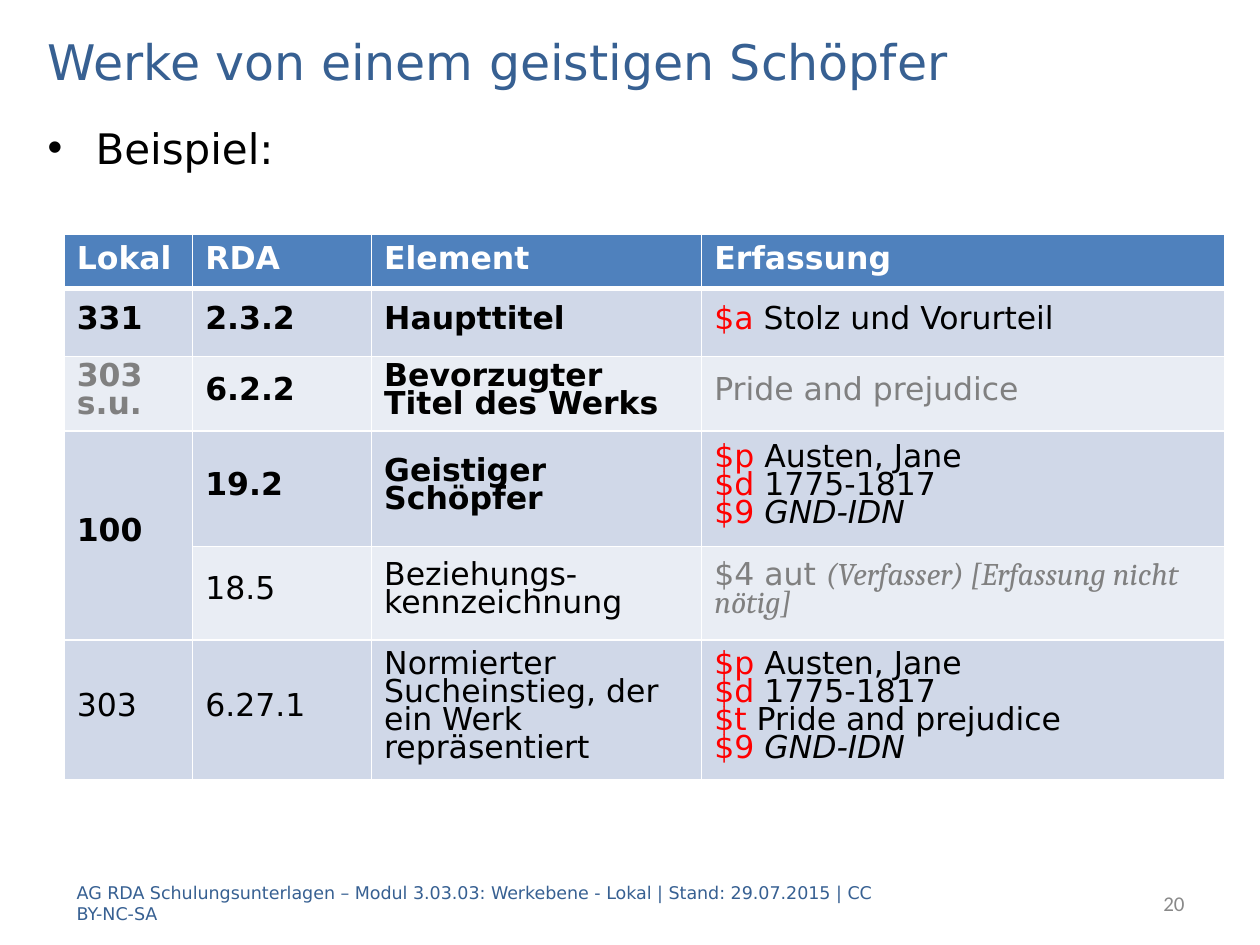
"""Build the slide on works by a single creator, with its cataloguing table."""
import pptx
import pptx.util
import pptx.dml.color
import pptx.enum.text
import pptx.oxml
import pptx.oxml.ns
from pptx.util import Inches, Pt

ANCHOR = pptx.enum.text.MSO_ANCHOR
ALIGN = pptx.enum.text.PP_ALIGN
SANS = "DejaVu Sans"
BLUE, BLACK, RED, GREY, WHITE = "376092", "000000", "FF0000", "808080", "FFFFFF"
HEADER_FILL, DARK_BAND, LIGHT_BAND = "4F81BD", "D0D8E8", "E9EDF4"

TITLE = "Werke von einem geistigen Schöpfer"
INTRO = "Beispiel:"
FOOTER = ("AG RDA Schulungsunterlagen – Modul 3.03.03: Werkebene - Lokal"
          " | Stand: 29.07.2015 | CC BY-NC-SA")
PAGE_NUMBER = "20"

STYLES = {
    "head": dict(color=WHITE, bold=True),
    "bold": dict(color=BLACK, bold=True),
    "plain": dict(color=BLACK),
    "code": dict(color=RED),
    "italic": dict(color=BLACK, italic=True),
    "grey": dict(color=GREY),
    "greybold": dict(color=GREY, bold=True),
    "note": dict(color=GREY, italic=True, font="Cambria"),
}
CREATOR = [("$p", "code"), (" Austen, Jane\n", "plain"),
           ("$d", "code"), (" 1775-1817\n", "plain")]
AUTHORITY = [("$9 ", "code"), ("GND-IDN", "italic")]
ROWS = [
    [[(heading, "head")] for heading in ("Lokal", "RDA", "Element", "Erfassung")],
    [[("331", "bold")], [("2.3.2", "bold")], [("Haupttitel", "bold")],
     [("$a", "code"), (" Stolz und Vorurteil", "plain")]],
    [[("303 s.u.", "greybold")], [("6.2.2", "bold")],
     [("Bevorzugter Titel des Werks", "bold")], [("Pride and prejudice", "grey")]],
    [[("100", "bold")], [("19.2", "bold")], [("Geistiger Schöpfer", "bold")],
     CREATOR + AUTHORITY],
    [[], [("18.5", "plain")], [("Beziehungs-kennzeichnung", "plain")],
     [("$4 aut ", "grey"), ("(Verfasser) [Erfassung nicht nötig]", "note")]],
    [[("303", "plain")], [("6.27.1", "plain")],
     [("Normierter Sucheinstieg, der ein Werk repräsentiert", "plain")],
     CREATOR + [("$t", "code"), (" Pride and prejudice\n", "plain")] + AUTHORITY],
]
COLUMN_WIDTHS = [1.02, 1.42, 2.62, 4.15]
ROW_HEIGHTS = [0.43, 0.54, 0.59, 0.92, 0.74, 1.11]


def rgb(hex_color):
    return pptx.dml.color.RGBColor.from_string(hex_color)


def add_run(paragraph, text, size, color, font=SANS, bold=False, italic=False):
    for index, line in enumerate(text.split("\n")):
        if index:
            paragraph.add_line_break()
        if line:
            run = paragraph.add_run()
            run.text = line
            run.font.name = font
            run.font.size = Pt(size)
            run.font.bold = bold
            run.font.italic = italic
            run.font.color.rgb = rgb(color)


def add_text(slide, box, text, size, color, font=SANS, anchor=ANCHOR.MIDDLE, align=ALIGN.LEFT):
    frame = slide.shapes.add_textbox(*map(Inches, box)).text_frame
    frame.word_wrap = True
    frame.vertical_anchor = anchor
    paragraph = frame.paragraphs[0]
    paragraph.alignment = align
    add_run(paragraph, text, size, color, font)
    return paragraph


def add_bullet(paragraph, indent):
    properties = paragraph._p.get_or_add_pPr()
    properties.set("marL", str(Inches(indent)))
    properties.set("indent", str(-Inches(indent)))
    for tag, attribute, value in (("buFont", "typeface", "Arial"), ("buChar", "char", "•")):
        bullet = pptx.oxml.parse_xml(
            f'<a:{tag} {pptx.oxml.ns.nsdecls("a")} {attribute}="{value}"/>')
        properties.append(bullet)


def set_borders(cell, widths):
    properties = cell._tc.get_or_add_tcPr()
    for position, (side, width) in enumerate(widths.items()):
        properties.insert(position, pptx.oxml.parse_xml(
            f'<a:ln{side} {pptx.oxml.ns.nsdecls("a")} w="{Pt(width)}">'
            f'<a:solidFill><a:srgbClr val="{WHITE}"/></a:solidFill></a:ln{side}>'))


def fill_cell(cell, runs, row):
    band = DARK_BAND if row % 2 else LIGHT_BAND
    cell.fill.solid()
    cell.fill.fore_color.rgb = rgb(band if row else HEADER_FILL)
    set_borders(cell, {"L": 1, "R": 1, "T": 3 if row == 1 else 1, "B": 1 if row else 3})
    paragraph = cell.text_frame.paragraphs[0]
    if row:
        cell.vertical_anchor = ANCHOR.MIDDLE
        paragraph.line_spacing = Pt(16)
        paragraph.space_before = paragraph.space_after = Pt(6)
    for text, style in runs:
        add_run(paragraph, text, 18, **STYLES[style])


def add_field_table(slide):
    size = sum(COLUMN_WIDTHS), sum(ROW_HEIGHTS)
    fields = slide.shapes.add_table(
        len(ROWS), len(COLUMN_WIDTHS), *map(Inches, (0.51, 1.86, *size))).table
    for column, width in zip(fields.columns, COLUMN_WIDTHS):
        column.width = Inches(width)
    for row, height in zip(fields.rows, ROW_HEIGHTS):
        row.height = Inches(height)
    for row, entries in enumerate(ROWS):
        for column, runs in enumerate(entries):
            fill_cell(fields.cell(row, column), runs, row)
    fields.cell(3, 0).merge(fields.cell(4, 0))


def main():
    deck = pptx.Presentation()
    deck.slide_width, deck.slide_height = Inches(10), Inches(7.5)
    slide = deck.slides.add_slide(deck.slide_layouts[6])
    add_text(slide, (0.28, 0.2, 9.45, 0.56), TITLE, 28, BLUE)
    intro = add_text(slide, (0.28, 0.92, 9.45, 5.98), INTRO, 24, BLACK, anchor=ANCHOR.TOP)
    intro.space_before = Pt(4.8)
    add_bullet(intro, 0.38)
    add_text(slide, (0.51, 6.97, 6.69, 0.4), FOOTER, 10, BLUE)
    add_text(slide, (7.91, 6.97, 1.59, 0.4), PAGE_NUMBER, 12, "898989", "Calibri",
             align=ALIGN.RIGHT)
    add_field_table(slide)
    deck.save("out.pptx")


if __name__ == "__main__":
    main()
